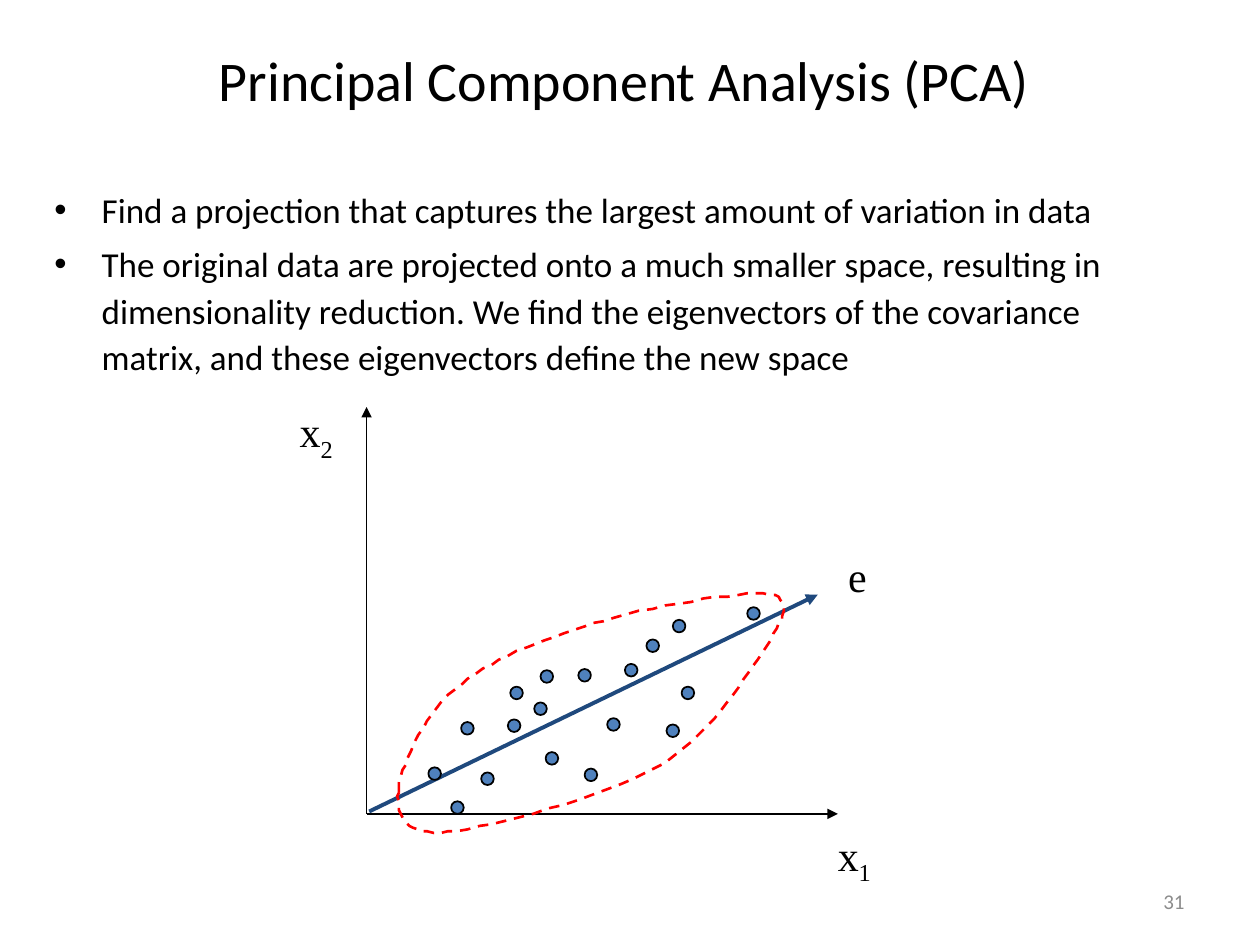
from pptx import Presentation
from pptx.dml.color import RGBColor
from pptx.enum.dml import MSO_LINE
from pptx.enum.shapes import MSO_CONNECTOR, MSO_SHAPE
from pptx.enum.text import MSO_ANCHOR, PP_ALIGN
from pptx.oxml.ns import qn
from pptx.util import Pt
from lxml.etree import SubElement

BLACK, NAVY, BLUE, RED, GRAY = "000000", "1F497D", "4F81BD", "FF0000", "8C8C8C"
SANS, SERIF = "Calibri", "Times New Roman"


def color(hex_code):
    return RGBColor.from_string(hex_code)


def write(paragraph, text, size=20, font=SANS, fill=BLACK, baseline=None):
    run = paragraph.add_run()
    run.text = text
    run.font.size = Pt(size)
    run.font.name = font
    run.font.color.rgb = color(fill)
    if baseline is not None:
        run.font._element.set("baseline", str(baseline))


def bezier(start, c1, c2, end, steps=16):
    """Points along a cubic curve, without its start."""
    for step in range(1, steps + 1):
        t = step / steps
        u = 1 - t
        yield tuple(u**3 * a + 3 * u * u * t * b + 3 * u * t * t * c + t**3 * d
                    for a, b, c, d in zip(start, c1, c2, end))


class PcaSlide:
    def __init__(self, deck):
        self.shapes = deck.slides.add_slide(deck.slide_layouts[6]).shapes

    def frame(self, left, top, width, height, anchor=MSO_ANCHOR.MIDDLE, wrap=True):
        box = self.shapes.add_textbox(Pt(left), Pt(top), Pt(width), Pt(height))
        box.text_frame.word_wrap = wrap
        box.text_frame.vertical_anchor = anchor
        return box.text_frame

    def line_of_text(self, left, top, width, height, text, align, **style):
        paragraph = self.frame(left, top, width, height).paragraphs[0]
        paragraph.alignment = align
        write(paragraph, text, **style)

    def bullets(self, left, top, width, height, items, indent=27):
        body = self.frame(left, top, width, height, anchor=MSO_ANCHOR.TOP)
        for index, item in enumerate(items):
            paragraph = body.add_paragraph() if index else body.paragraphs[0]
            paragraph.line_spacing = 1.1
            paragraph.space_before = Pt(4.5)
            props = paragraph._p.get_or_add_pPr()
            props.set("marL", str(Pt(indent)))
            props.set("indent", str(-Pt(indent)))
            SubElement(props, qn("a:buFont")).set("typeface", "Arial")
            SubElement(props, qn("a:buChar")).set("char", "•")
            write(paragraph, item)

    def label(self, left, top, width, letter, subscript=""):
        paragraph = self.frame(left, top, width, 36, wrap=False).paragraphs[0]
        paragraph.alignment = PP_ALIGN.CENTER
        write(paragraph, letter, size=24, font=SERIF)
        if subscript:
            write(paragraph, subscript, size=24, font=SERIF, baseline=-25000)

    def arrow(self, start, end, stroke=BLACK, weight=1):
        arrow = self.shapes.add_connector(
            MSO_CONNECTOR.STRAIGHT, *(Pt(v) for v in (*start, *end)))
        arrow.line.color.rgb = color(stroke)
        arrow.line.width = Pt(weight)
        SubElement(arrow.line._get_or_add_ln(), qn("a:tailEnd")).set("type", "triangle")
        SubElement(arrow._element.spPr, qn("a:effectLst"))

    def dot(self, x, y, size=7.2):
        dot = self.shapes.add_shape(MSO_SHAPE.OVAL, Pt(x - size / 2), Pt(y - size / 2),
                                    Pt(size), Pt(size))
        dot.shadow.inherit = False
        dot.fill.solid()
        dot.fill.fore_color.rgb = color(BLUE)
        dot.line.color.rgb = color(BLACK)
        dot.line.width = Pt(1)

    def dashed_outline(self, start, curves):
        points = [start]
        for curve in curves:
            points.extend(bezier(points[-1], *curve))
        builder = self.shapes.build_freeform(*start, scale=float(Pt(1)))
        builder.add_line_segments(points[1:], close=True)
        outline = builder.convert_to_shape()
        outline.shadow.inherit = False
        outline.fill.background()
        outline.line.color.rgb = color(RED)
        outline.line.width = Pt(1.5)
        outline.line.dash_style = MSO_LINE.DASH


ORIGIN = (209.5, 465.1)
OBSERVATIONS = [
    (267.1, 416.2), (295.2, 396), (248.4, 442.1), (308.9, 405), (293.8, 414.7),
    (350.6, 414), (337.7, 442.8), (315.4, 433.4), (334.1, 385.9), (393.1, 396),
    (430.6, 350.6), (278.6, 445), (360.7, 383), (388.1, 357.8), (312.5, 386.6),
    (373, 369), (384.5, 417.6), (261.4, 461.5),
]
CLOUD_START = (227.5, 452.9)
CLOUD_CURVES = [
    ((228.2, 439.9), (241.2, 409.7), (259.9, 393.8)),
    ((278.6, 377.3), (309.6, 365), (339.1, 356.4)),
    ((369.4, 347), (424.1, 337), (439.9, 339.8)),
    ((455.8, 342.7), (445.7, 357.1), (434.9, 373.7)),
    ((424.1, 390.2), (403.9, 421.9), (374.4, 439.2)),
    ((344.9, 455.8), (280.8, 472.3), (256.3, 475.2)),
    ((231.8, 478.1), (226.8, 466.6), CLOUD_START),
]


def main():
    deck = Presentation()
    deck.slide_width, deck.slide_height = Pt(720), Pt(540)
    slide = PcaSlide(deck)

    # Title, explanation and page number
    slide.line_of_text(12, 12, 690, 66, "Principal Component Analysis (PCA)",
                       PP_ALIGN.CENTER, size=32)
    slide.bullets(24, 102, 660, 126, [
        "Find a projection that captures the largest amount of variation in data",
        "The original data are projected onto a much smaller space, resulting in "
        "dimensionality reduction. We find the eigenvectors of the covariance "
        "matrix, and these eigenvectors define the new space",
    ])
    slide.line_of_text(516, 500.4, 168, 28.8, "31", PP_ALIGN.RIGHT, size=12, fill=GRAY)

    # Axes and principal direction
    slide.arrow(ORIGIN, (ORIGIN[0], 232.6))
    slide.arrow(ORIGIN, (478.8, ORIGIN[1]))
    slide.arrow((211, 463.7), (467.3, 339.8), stroke=NAVY, weight=2.25)

    # Data cloud
    for x, y in OBSERVATIONS:
        slide.dot(x, y)
    slide.dashed_outline(CLOUD_START, CLOUD_CURVES)

    # Axis and eigenvector labels
    slide.label(163.4, 230.4, 34.6, "x", "2")
    slide.label(470.9, 472.3, 34.6, "x", "1")
    slide.label(477.4, 311, 25.2, "e")

    deck.save("out.pptx")


if __name__ == "__main__":
    main()
